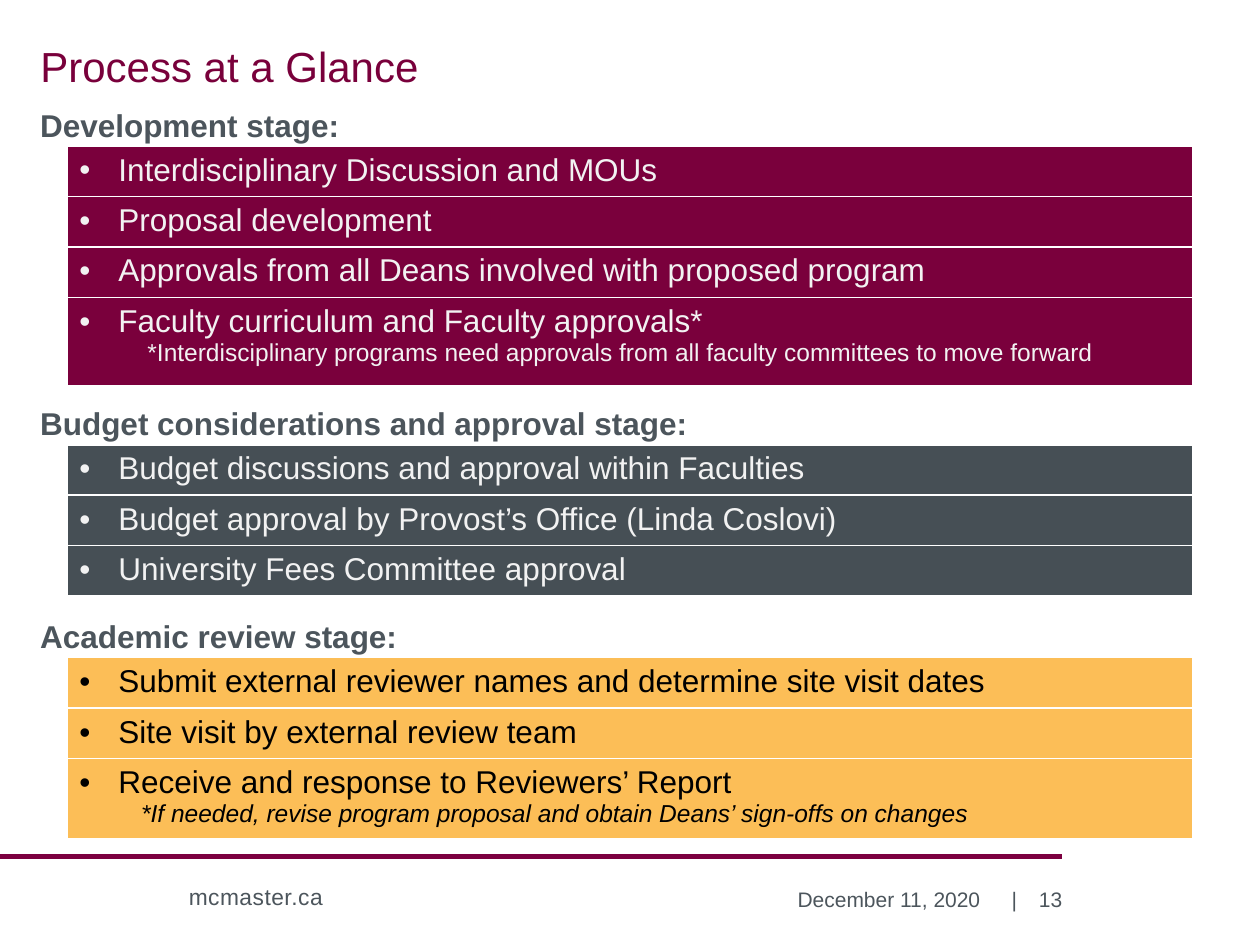
from lxml import etree
from pptx import Presentation
from pptx import util as u
from pptx.dml.color import RGBColor
from pptx.enum import shapes, text
from pptx.oxml import ns

deck = Presentation()
deck.slide_width, deck.slide_height = u.Inches(10), u.Inches(7.5)
COL = deck.slide_width / 100
ROW = deck.slide_height / 75
GREY, LIGHT, BLACK = "4C555C", "F2F2F2", "000000"
LEFT, MIDDLE = text.PP_ALIGN.LEFT, text.MSO_ANCHOR.MIDDLE
RIGHT = text.PP_ALIGN.RIGHT


def colour(value):
    return RGBColor.from_string(value)


def write(para, words, ink, **values):
    span = para.add_run()
    span.text = words
    span.font.color.rgb = colour(ink)
    for name, value in {"name": "Arial", "size": u.Pt(18), **values}.items():
        setattr(span.font, name, value)
    return span


page = deck.slides.add_slide(deck.slide_layouts[5])

title = page.shapes.title
title_place = {"left": 2.2 * COL, "top": 0, "width": 96 * COL, "height": 7.2 * ROW}
for name, value in title_place.items():
    setattr(title, name, round(value))
title_format = {
    "margin_bottom": 0,
    "word_wrap": True,
    "auto_size": text.MSO_AUTO_SIZE.NONE,
    "vertical_anchor": text.MSO_ANCHOR.BOTTOM,
}
for name, value in title_format.items():
    setattr(title.text_frame, name, value)
para = title.text_frame.paragraphs[0]
para.alignment, para.line_spacing = LEFT, 1.5
write(para, "Process at a Glance", "79003B", size=u.Pt(24))

rule = page.shapes.add_connector(
    shapes.MSO_CONNECTOR.STRAIGHT, 0, round(68 * ROW), round(84.3 * COL), round(68 * ROW))
rule.line.color.rgb = colour("7C0040")
rule.line.width = u.Pt(3)
etree.SubElement(rule._element.spPr, ns.qn("a:effectLst"))

footers = [
    ("mcmaster.ca", 14, 69.6, 27.4, 3.2, 13, {}, LEFT),
    ("|", 79.2, 69.4, 2.5, 4, 12, {"vertical_anchor": MIDDLE}, RIGHT),
    ("13", 79.1, 69.4, 5.2, 4, 12, {"vertical_anchor": MIDDLE, "margin_right": 0}, RIGHT),
    ("December 11, 2020", 57.4, 69.4, 21.4, 4, 12, {"vertical_anchor": MIDDLE}, RIGHT),
]
for words, left, top, width, height, size, frame_format, align in footers:
    box = page.shapes.add_textbox(
        round(left * COL), round(top * ROW), round(width * COL), round(height * ROW))
    for name, value in {"word_wrap": True, **frame_format}.items():
        setattr(box.text_frame, name, value)
    para = box.text_frame.paragraphs[0]
    para.alignment = align
    span = write(para, words, GREY, size=u.Pt(size))
    if align == LEFT:
        span._r.get_or_add_rPr().set("spc", "30")

stages = [
    ("Development stage:", 7.9, 26, "7A003C", LIGHT, 7,
     ["Interdisciplinary Discussion and MOUs",
      "Proposal development",
      "Approvals from all Deans involved with proposed program",
      "Faculty curriculum and Faculty approvals*"],
     "*Interdisciplinary programs need approvals from all faculty committees to move forward",
     5.4, False),
    ("Budget considerations and approval stage:", 31.6, 53.9, "464F55", LIGHT, 4,
     ["Budget discussions and approval within Faculties",
      "Budget approval by Provost’s Office (Linda Coslovi)",
      "University Fees Committee approval"],
     "", 0, False),
    ("Academic review stage:", 48.5, 30.6, "FCBE57", BLACK, 6.3,
     ["Submit external reviewer names and determine site visit dates",
      "Site visit by external review team",
      "Receive and response to Reviewers’ Report"],
     "*If needed, revise program proposal and obtain Deans’ sign-offs on changes",
     4.9, True),
]
for heading, top, width, fill, ink, last_row, steps, note, note_indent, slanted in stages:
    box = page.shapes.add_textbox(
        round(2.2 * COL), round(top * ROW), round(width * COL), round(4 * ROW))
    box.text_frame.word_wrap = False
    write(box.text_frame.paragraphs[0], heading, GREY, bold=True)

    heights = [4] * (len(steps) - 1) + [last_row]
    table = page.shapes.add_table(
        len(steps), 1, round(5.3 * COL), round((top + 3.7) * ROW),
        round(89.4 * COL), round(sum(heights) * ROW)).table
    table.first_row = table.horz_banding = False
    for index, step in enumerate(steps):
        table.rows[index].height = round(heights[index] * ROW)
        cell = table.cell(index, 0)
        properties = cell._tc.get_or_add_tcPr()
        for side in ("a:lnL", "a:lnR", "a:lnT", "a:lnB"):
            border = etree.SubElement(properties, ns.qn(side), w=str(u.Pt(1)))
            paint = etree.SubElement(border, ns.qn("a:solidFill"))
            etree.SubElement(paint, ns.qn("a:srgbClr"), val="FFFFFF")
        cell.fill.solid()
        cell.fill.fore_color.rgb = colour(fill)
        para = cell.text_frame.paragraphs[0]
        layout = para._p.get_or_add_pPr()
        layout.set("marL", str(round(3.1 * COL)))
        layout.set("indent", str(round(-3.1 * COL)))
        etree.SubElement(layout, ns.qn("a:buFont"), typeface="Arial")
        etree.SubElement(layout, ns.qn("a:buChar"), char="•")
        write(para, step, ink)
    if note:
        para = cell.text_frame.add_paragraph()
        para._p.get_or_add_pPr().set("marL", str(round(note_indent * COL)))
        write(para, note, ink, size=u.Pt(14), italic=slanted)

deck.save("out.pptx")
